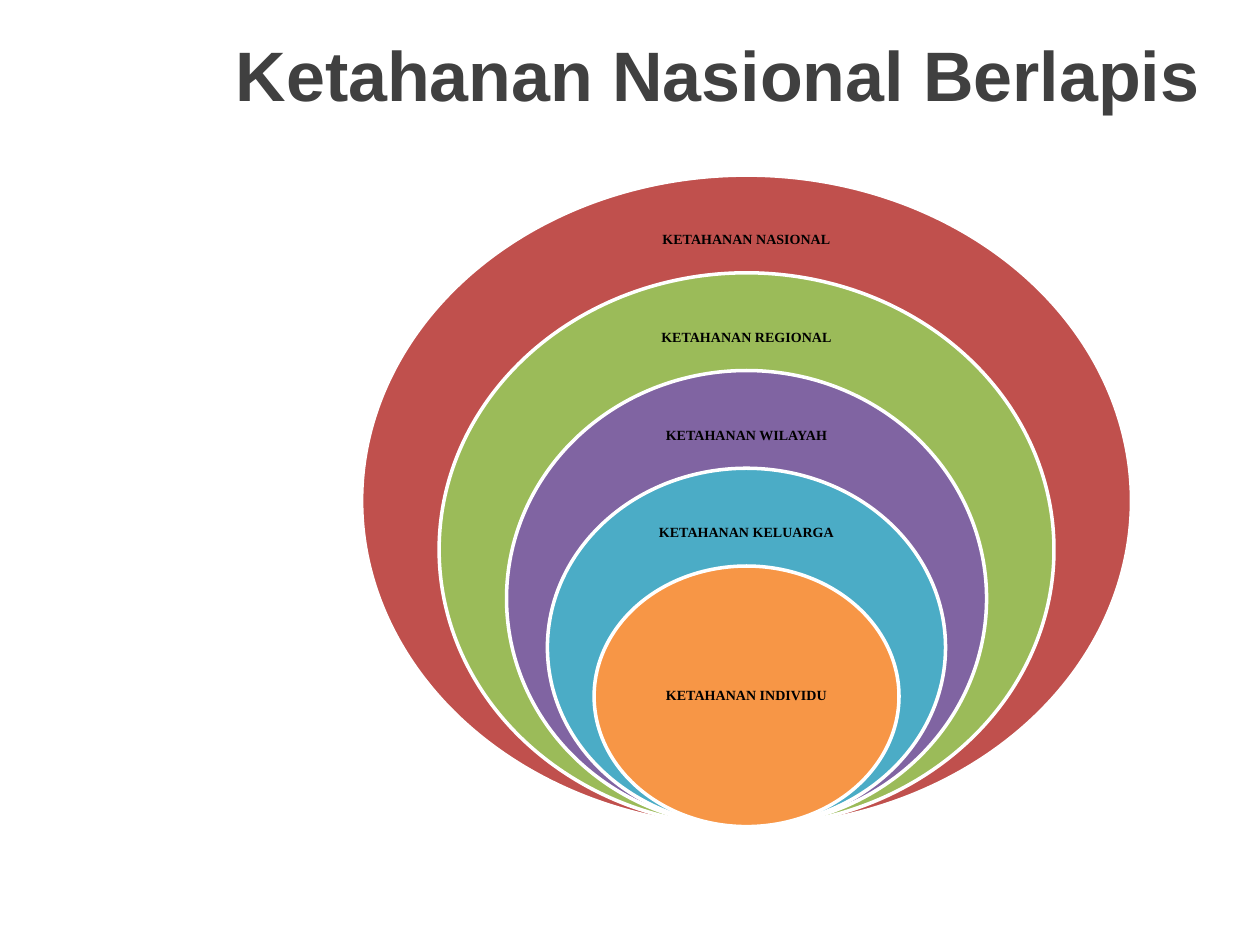
from dataclasses import dataclass

from pptx import Presentation
from pptx.dml.color import RGBColor
from pptx.enum import shapes, text
from pptx.util import Inches, Pt


@dataclass(frozen=True)
class Theme:
    head: str = "404040"
    ink: str = "000000"
    edge: str = "FFFFFF"
    sans: str = "Arial"
    serif: str = "Times New Roman"
    big: int = 40
    small: int = 8
    rim: int = 2


THEME = Theme()

# label, fill, ellipse width, label width; from the outside in
LAYERS = [
    ("KETAHANAN NASIONAL", "C0504D", 6.11, 2.29),
    ("KETAHANAN REGIONAL", "9BBB59", 4.88, 2.1),
    ("KETAHANAN WILAYAH", "8064A2", 3.81, 1.97),
    ("KETAHANAN KELUARGA", "4BACC6", 3.16, 1.7),
    ("KETAHANAN INDIVIDU", "F79646", 2.42, 1.71),
]


def style(para, face, size, color):
    font = para.font
    font.name, font.size, font.bold = face, Pt(size), True
    font.color.rgb = RGBColor.from_string(color)


def add_title(slide, left, top, width, height):
    title = slide.shapes.title
    title.left, title.top = Inches(left), Inches(top)
    title.width, title.height = Inches(width), Inches(height)
    frame = title.text_frame
    frame.text = "Ketahanan Nasional Berlapis"
    frame.vertical_anchor = text.MSO_ANCHOR.MIDDLE
    para = frame.paragraphs[0]
    para.alignment = text.PP_ALIGN.LEFT
    style(para, THEME.sans, THEME.big, THEME.head)


def add_oval(group, left, top, width, height, fill):
    oval = group.shapes.add_shape(
        shapes.MSO_SHAPE.OVAL,
        Inches(left), Inches(top), Inches(width), Inches(height))
    oval.shadow.inherit = False
    oval.fill.solid()
    oval.fill.fore_color.rgb = RGBColor.from_string(fill)
    oval.line.color.rgb = RGBColor.from_string(THEME.edge)
    oval.line.width = Pt(THEME.rim)


def add_label(group, left, top, width, height, words):
    box = group.shapes.add_textbox(
        Inches(left), Inches(top), Inches(width), Inches(height))
    frame = box.text_frame
    frame.word_wrap = True
    frame.vertical_anchor = text.MSO_ANCHOR.MIDDLE
    frame.margin_left = frame.margin_right = Inches(0.06)
    frame.margin_top = frame.margin_bottom = Inches(0.06)
    frame.text = words
    para = frame.paragraphs[0]
    para.alignment = text.PP_ALIGN.CENTER
    para.line_spacing = 0.9
    style(para, THEME.serif, THEME.small, THEME.ink)


def add_layers(slide, left, top, width, height):
    """Nest ovals on one base, each shorter by 15 % of the full height."""
    group = slide.shapes.add_group_shape()
    mid, base = left + width / 2, top + height
    step = 0.15 * height
    for i, (words, fill, wide, span) in enumerate(LAYERS):
        tall = height - i * step
        peak = base - tall
        add_oval(group, mid - wide / 2, peak, wide, tall, fill)
        if i == len(LAYERS) - 1:
            drop, deep = tall / 4, tall / 2
        else:
            drop, deep = step / 3, step * 2 / 3
        add_label(group, mid - span / 2, peak + drop, span, deep, words)


def main():
    deck = Presentation()
    deck.slide_width, deck.slide_height = Inches(10), Inches(7.5)
    slide = deck.slides.add_slide(deck.slide_layouts[5])
    add_title(slide, 1.77, 0, 8.23, 1.17)
    add_layers(slide, 2.87, 1.39, 6.11, 5.17)
    deck.save("out.pptx")


if __name__ == "__main__":
    main()
